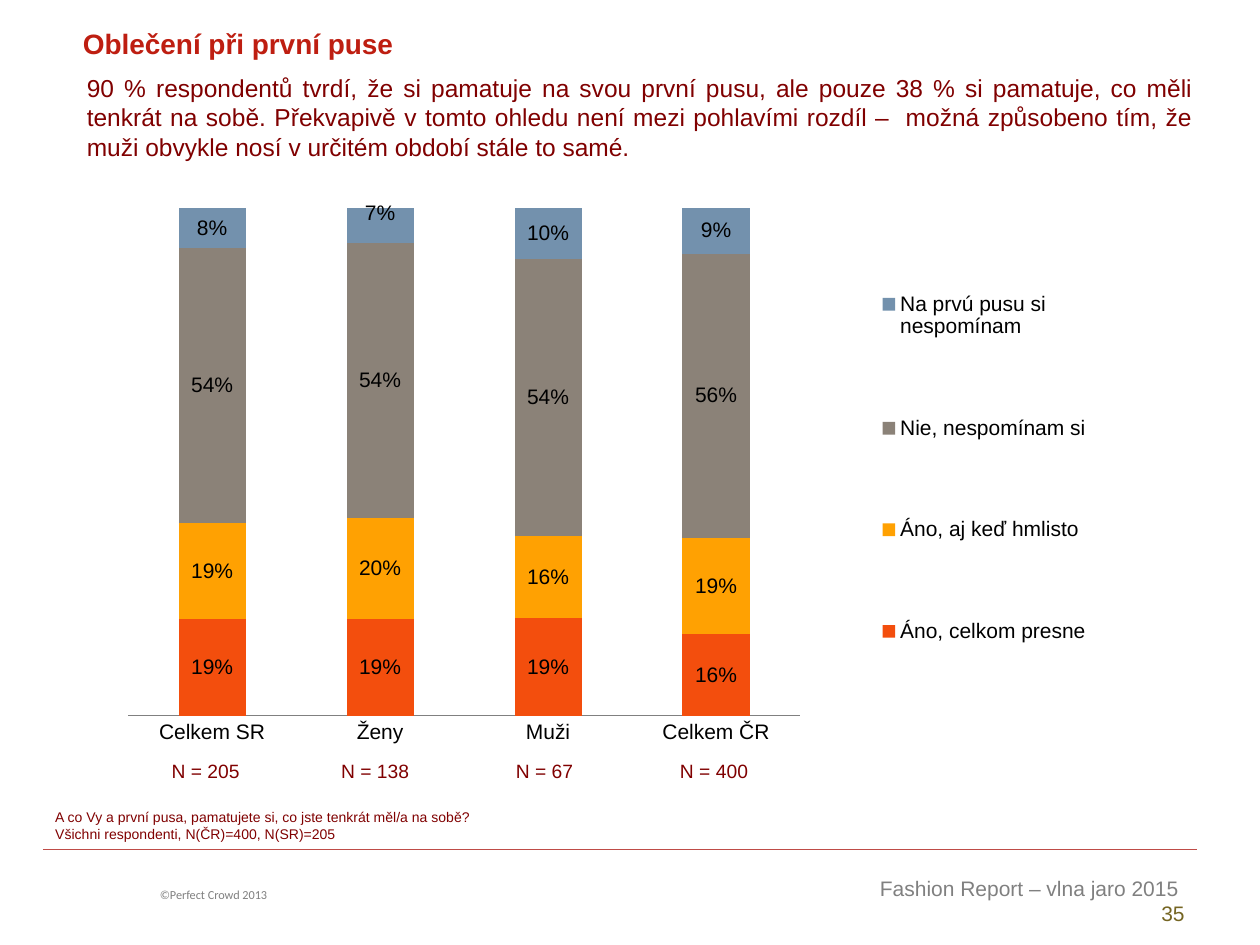
from lxml import etree
from pptx import Presentation
from pptx.chart.data import CategoryChartData
from pptx.dml.color import RGBColor
from pptx.enum.chart import XL_CHART_TYPE as CT, XL_LABEL_POSITION as LP
from pptx.enum.chart import XL_LEGEND_POSITION as LEG, XL_TICK_MARK as TM
from pptx.enum.shapes import MSO_CONNECTOR
from pptx.enum.text import MSO_ANCHOR, PP_ALIGN
from pptx.oxml.ns import qn
from pptx.util import Inches, Pt

COLORS = {
    "title": "BE1E11", "body": "800000", "footer": "808080", "page": "756522",
    "rule": "BF4C48", "axis": "808080", "label": "000000",
}
CATEGORIES = ["Celkem SR", "Ženy", "Muži", "Celkem ČR"]
SERIES = [
    ("Áno, celkom presne", (19, 19, 19, 16), "F34E0D"),
    ("Áno, aj keď hmlisto", (19, 20, 16, 19), "FFA102"),
    ("Nie, nespomínam si", (54, 54, 54, 56), "8B8278"),
    ("Na prvú pusu si nespomínam", (8, 7, 10, 9), "7391AD"),
]
SAMPLES = ["N = 205", "N = 138", "N = 67", "N = 400"]


def rgb(name):
    return RGBColor.from_string(COLORS[name])


def set_font(font, size, color, name="Arial", bold=False):
    font.size, font.name, font.bold = Pt(size), name, bold
    font.color.rgb = rgb(color)


def add_run(p, text, size, color, **style):
    r = p.add_run()
    r.text = text
    set_font(r.font, size, color, **style)


def add_text(slide, box, lines, size, color, align=PP_ALIGN.LEFT, **style):
    """Add a wrapped text box with one paragraph for each line."""
    tf = slide.shapes.add_textbox(*map(Inches, box)).text_frame
    tf.word_wrap = True
    for i, line in enumerate(lines):
        p = tf.add_paragraph() if i else tf.paragraphs[0]
        p.alignment = align
        add_run(p, line, size, color, **style)
    return tf


def set_layout(parent, index, x, y, w=None, h=None, inner=False, edge=True):
    """Give a chart part a manual layout, in fractions of the chart."""
    for old in parent.findall(qn("c:layout")):
        parent.remove(old)
    layout = etree.Element(qn("c:layout"))
    manual = etree.SubElement(layout, qn("c:manualLayout"))
    items = [("layoutTarget", "inner")] if inner else []
    if edge:
        items += [("xMode", "edge"), ("yMode", "edge")]
    items += [("x", x), ("y", y)]
    if w is not None:
        items += [("w", w), ("h", h)]
    for tag, value in items:
        etree.SubElement(manual, qn("c:" + tag)).set("val", str(value))
    parent.insert(index, layout)


def add_header(slide, x, y):
    add_text(slide, (x, y, 7.51, 0.37), ["Oblečení při první puse"],
             16, "title", bold=True)
    add_text(slide, (x + 0.03, y + 0.37, 8.98, 0.81), [
        "90 % respondentů tvrdí, že si pamatuje na svou první pusu, ale pouze "
        "38 % si pamatuje, co měli tenkrát na sobě. Překvapivě v tomto ohledu "
        "není mezi pohlavími rozdíl –  možná způsobeno tím, že muži obvykle "
        "nosí v určitém období stále to samé."], 14, "body", PP_ALIGN.JUSTIFY)


def add_memory_chart(slide, x, y, w, h):
    data = CategoryChartData(number_format="0")
    data.categories = CATEGORIES
    for name, values, _ in SERIES:
        data.add_series(name, values)
    chart = slide.shapes.add_chart(
        CT.COLUMN_STACKED_100, *map(Inches, (x, y, w, h)), data).chart
    set_font(chart.font, 12, "label")
    chart.has_title = False

    plot = chart.plots[0]
    plot.gap_width, plot.overlap = 150, 100
    plot.vary_by_categories = False
    for series, (_, _, color) in zip(plot.series, SERIES):
        series.format.fill.solid()
        series.format.fill.fore_color.rgb = RGBColor.from_string(color)
        labels = series.data_labels
        labels.show_value = True
        labels.number_format = '#,##0"%"'
        labels.number_format_is_linked = False
        set_font(labels.font, 12, "label")

    raised = plot.series[3].points[1].data_label
    set_font(raised.font, 12, "label")
    raised.position = LP.CENTER
    d_lbl = next(plot.series[3]._element.iter(qn("c:dLbl")))
    set_layout(d_lbl, 1, 0, -0.02, edge=False)
    fmt = etree.Element(qn("c:numFmt"), formatCode='#,##0"%"', sourceLinked="0")
    d_lbl.insert(2, fmt)

    axis = chart.category_axis
    axis.major_tick_mark = axis.minor_tick_mark = TM.NONE
    axis.format.line.color.rgb = rgb("axis")
    chart.value_axis.visible = False
    chart.value_axis.has_major_gridlines = False

    chart.has_legend = True
    chart.legend.position = LEG.RIGHT
    chart.legend.include_in_layout = False
    set_font(chart.legend.font, 12, "label")
    set_layout(chart.legend._element, 1, 0.71, 0.06, 0.22, 0.84)
    plot_area = next(chart._chartSpace.iter(qn("c:plotArea")))
    set_layout(plot_area, 0, 0.03, 0.05, 0.62, 0.84, inner=True)


def add_sample_sizes(slide, x, y, w, h):
    table = slide.shapes.add_table(
        1, len(SAMPLES), *map(Inches, (x, y, w, h))).table
    table.first_row = table.horz_banding = False
    table.rows[0].height = Inches(h)
    for cell, sample in zip(table.rows[0].cells, SAMPLES):
        cell.fill.background()
        cell.vertical_anchor = MSO_ANCHOR.MIDDLE
        cell.margin_left = cell.margin_right = 0
        cell.margin_top = cell.margin_bottom = 0
        p = cell.text_frame.paragraphs[0]
        p.alignment = PP_ALIGN.CENTER
        add_run(p, sample, 11, "body")


def add_footer(slide, x, y, w):
    """Add the question, the rule at height y and the lines below it."""
    add_text(slide, (x, y - 0.37, 9.06, 0.37), [
        "A co Vy a první pusa, pamatujete si, co jste tenkrát měl/a na sobě?",
        "Všichni respondenti, N(ČR)=400, N(SR)=205"], 8, "body")
    rule = slide.shapes.add_connector(
        MSO_CONNECTOR.STRAIGHT, *map(Inches, (x, y, x + w, y)))
    rule.line.color.rgb = rgb("rule")
    rule.line.width = Pt(0.75)
    etree.SubElement(rule._element.spPr, qn("a:effectLst"))
    add_text(slide, (x + 0.83, y + 0.25, 2.91, 0.22),
             ["©Perfect Crowd 2013"], 7, "footer", name="Calibri")
    tf = add_text(slide, (x + w - 3.71, y + 0.16, 3.71, 0.5),
                  ["Fashion Report – vlna jaro 2015 "], 12, "footer",
                  PP_ALIGN.RIGHT)
    p = tf.paragraphs[0]
    p.add_line_break()
    add_run(p, "35", 12, "page")


def main():
    prs = Presentation()
    prs.slide_width, prs.slide_height = Inches(10), Inches(7.5)
    slide = prs.slides.add_slide(prs.slide_layouts[6])
    add_footer(slide, 0.34, 6.74, 9.16)
    add_header(slide, 0.56, 0.16)
    add_memory_chart(slide, 0.76, 1.41, 8.6, 4.8)
    add_sample_sizes(slide, 0.96, 6.02, 5.38, 0.21)
    prs.save("out.pptx")


if __name__ == "__main__":
    main()
